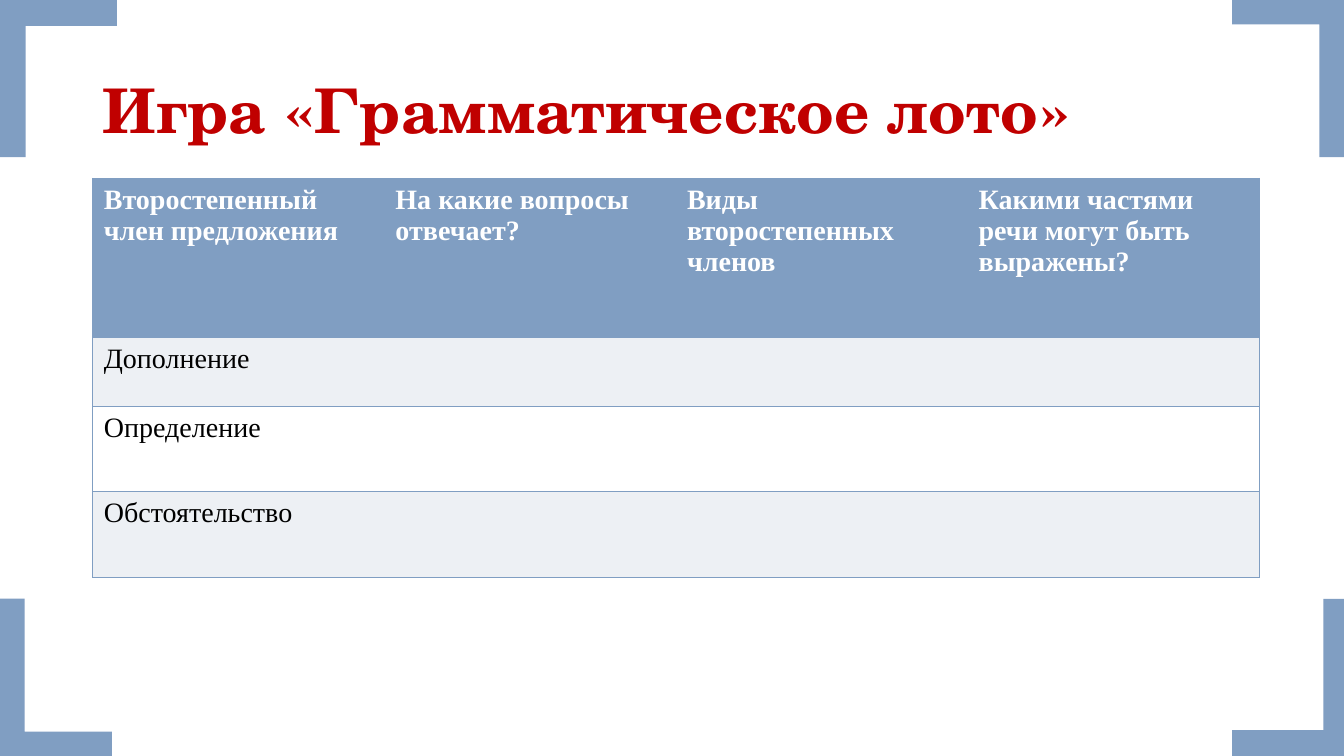
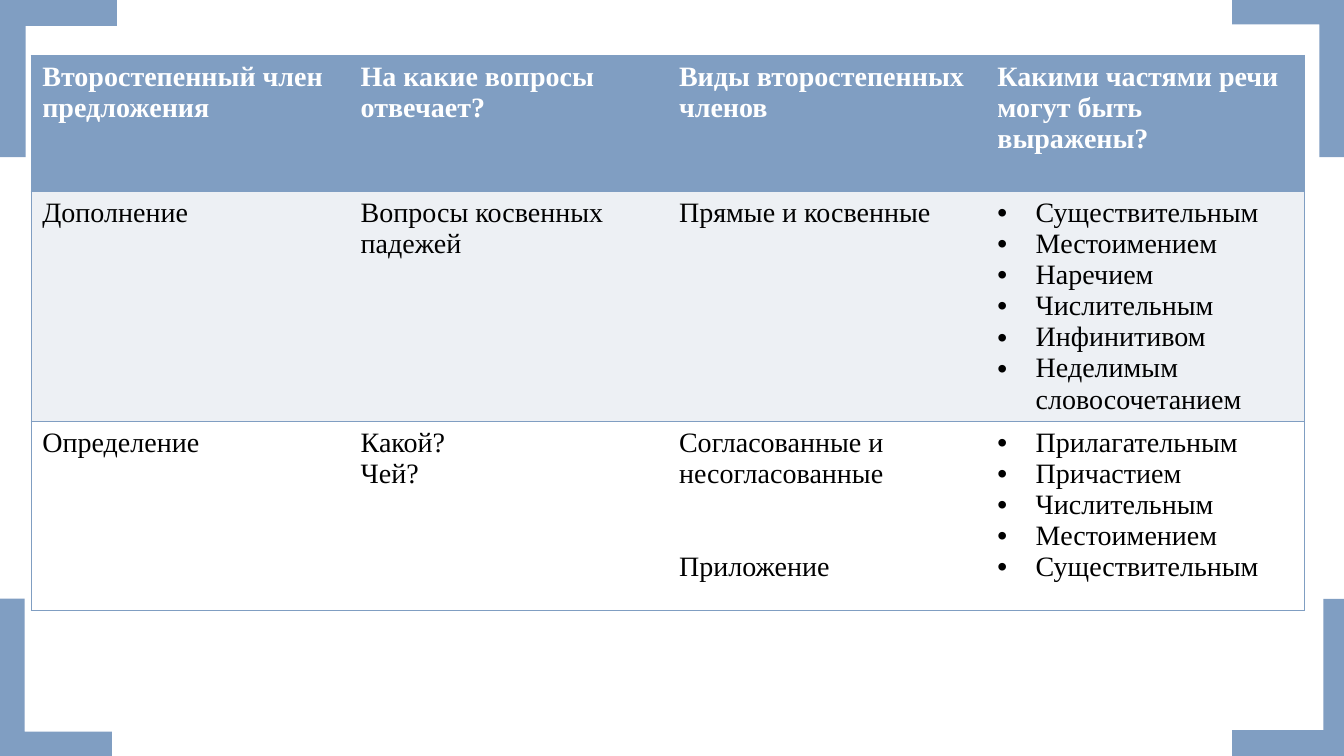
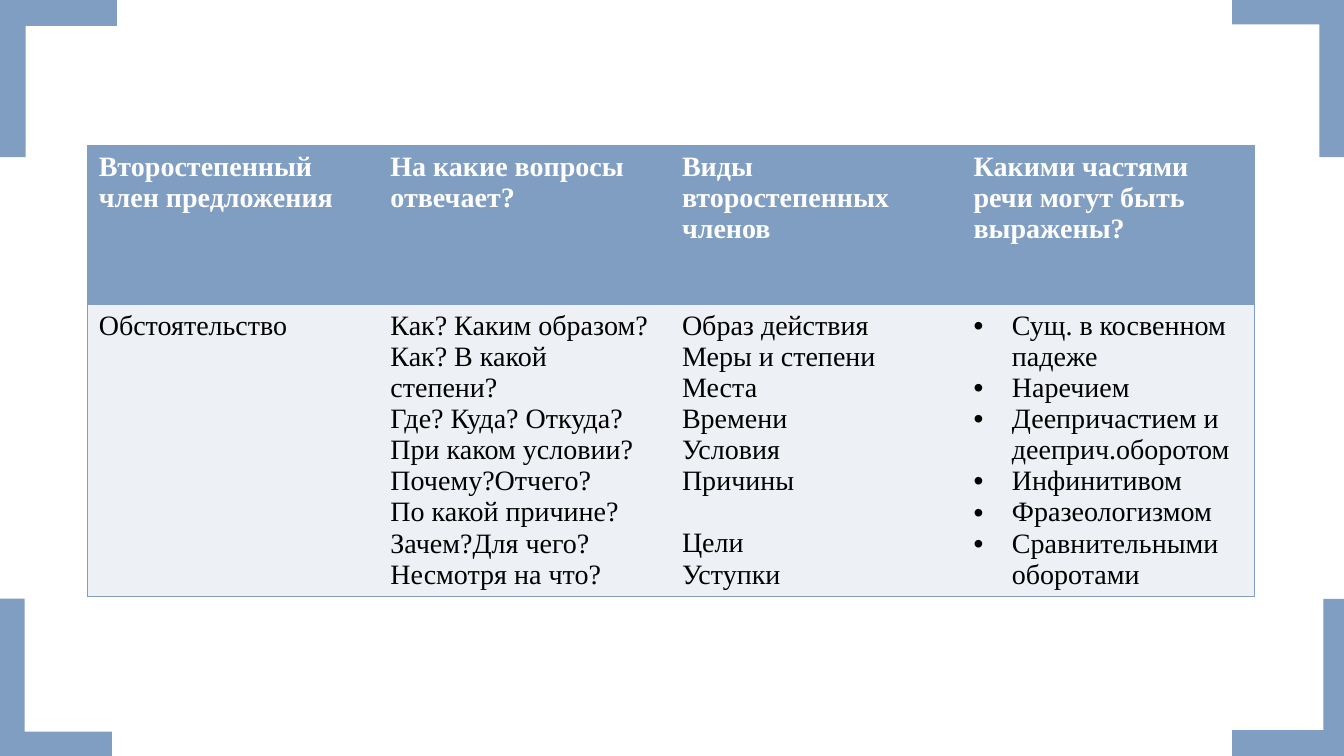
"""Builds three slides of a grammar lotto: an empty grid and its answers."""
from pptx import Presentation
from pptx.dml.color import RGBColor
from pptx.enum.shapes import MSO_SHAPE
from pptx.enum.text import MSO_ANCHOR, PP_ALIGN
from pptx.oxml.ns import qn
from pptx.util import Inches, Pt
from lxml.etree import SubElement

BLUE, PALE, WHITE, BLACK, RED = "809EC2", "EDF0F4", "FFFFFF", "000000", "C00000"
TITLE_FONT = {"name": "TeX Gyre Schola", "size": Pt(44), "bold": True}
HEADER_FONT = {"name": "Times New Roman", "size": Pt(20), "bold": True}
BODY_FONT = {**HEADER_FONT, "bold": False}
MARGINS = {"margin_left": Inches(0.11), "margin_right": Inches(0.11),
           "margin_top": Inches(0.06), "margin_bottom": Inches(0.06)}
NO_STYLE_NO_GRID = "{2D5ABB26-0587-4C30-8999-92F81FD0307C}"
LINE_HEIGHT = 22.15
BULLET_COLUMN = 3

CORNERS = [
    (0, 5.94, 1.11, 1.56, 0),
    (12.22, 0, 1.11, 1.56, 180),
    (12.02, 6.14, 1.56, 1.16, 270),
    (-0.2, 0.2, 1.56, 1.16, 90),
]

HEADER = [["Второстепенный член предложения"], ["На какие вопросы отвечает?"],
          ["Виды второстепенных членов"], ["Какими частями речи могут быть выражены?"]]

SLIDES = [
    {
        "title": "Игра «Грамматическое лото»",
        "at": (0.92, 1.77), "width": 11.57, "heights": [1.58, 0.68, 0.85, 0.85],
        "rows": [
            [["Дополнение"], [], [], []],
            [["Определение"], [], [], []],
            [["Обстоятельство"], [], [], []],
        ],
    },
    {
        "at": (0.31, 0.55), "width": 12.63, "heights": [1.35, 2.26, 1.88],
        "rows": [
            [["Дополнение"], ["Вопросы косвенных падежей"], ["Прямые и косвенные"],
             ["Существительным", "Местоимением", "Наречием", "Числительным",
              "Инфинитивом", "Неделимым словосочетанием"]],
            [["Определение"], ["Какой?", "Чей?"],
             ["Согласованные и несогласованные", "Приложение"],
             ["Прилагательным", "Причастием", "Числительным", "Местоимением",
              "Существительным"]],
        ],
        "lines_before": {"Приложение": 2},
    },
    {
        "at": (0.87, 1.44), "width": 11.57, "heights": [1.58, 2.87],
        "rows": [
            [["Обстоятельство"],
             ["Как? Каким образом?", "Как? В какой степени?", "Где? Куда? Откуда?",
              "При каком условии?", "Почему?Отчего?", "По какой причине?",
              "Зачем?Для чего?", "Несмотря на что?"],
             ["Образ действия", "Меры и степени", "Места", "Времени", "Условия",
              "Причины", "Цели", "Уступки"],
             ["Сущ. в косвенном падеже", "Наречием",
              "Деепричастием и дееприч.оборотом", "Инфинитивом", "Фразеологизмом",
              "Сравнительными оборотами"]],
        ],
        "lines_before": {"Цели": 1},
    },
]


def paint(target, color):
    """Gives a fill a solid colour."""
    target.solid()
    target.fore_color.rgb = RGBColor.from_string(color)


def apply(target, values):
    """Sets attributes from a dict."""
    for name, value in values.items():
        setattr(target, name, value)


def style_font(font, values, color):
    """Formats a font and colours it."""
    apply(font, values)
    font.color.rgb = RGBColor.from_string(color)


def add_corners(deck, page):
    """Draws the corner brackets and moves them to the slide master."""
    tree = deck.slide_master.element.cSld.spTree
    for index, (left, top, width, height, angle) in enumerate(CORNERS):
        corner = page.shapes.add_shape(MSO_SHAPE.CORNER, Inches(left), Inches(top),
                                       Inches(width), Inches(height))
        corner.rotation = angle
        corner.adjustments[0], corner.adjustments[1] = 0.218, 0.221
        paint(corner.fill, BLUE)
        corner.line.fill.background()
        corner.shadow.inherit = False
        tree.insert(2 + index, corner.element)


def set_title(page, text):
    """Places and formats the slide title."""
    title = page.shapes.title
    apply(title, {"left": Inches(0.92), "top": Inches(0.4),
                  "width": Inches(11.5), "height": Inches(1.45)})
    apply(title.text_frame, {"text": text, "word_wrap": True,
                             "vertical_anchor": MSO_ANCHOR.MIDDLE})
    para = title.text_frame.paragraphs[0]
    apply(para, {"alignment": PP_ALIGN.LEFT, "line_spacing": 0.9})
    style_font(para.runs[0].font, TITLE_FONT, RED)


def add_borders(cell, sides):
    """Draws thin blue lines on the given sides of a cell."""
    properties = cell._tc.get_or_add_tcPr()
    for side in sides:
        line = SubElement(properties, qn(f"a:ln{side}"), w=str(Pt(1)))
        fill = SubElement(line, qn("a:solidFill"))
        SubElement(fill, qn("a:srgbClr"), val=BLUE)


def add_bullet(para):
    """Gives a paragraph a hanging bullet."""
    properties = para._p.get_or_add_pPr()
    properties.set("marL", str(Inches(0.38)))
    properties.set("indent", str(-Inches(0.38)))
    SubElement(properties, qn("a:buFont"), typeface="Arial")
    SubElement(properties, qn("a:buChar"), char="•")


def fill_cell(cell, lines, row, column, lines_before):
    """Writes the lines of one cell and formats it."""
    edges = {0: "L", len(HEADER) - 1: "R"}
    add_borders(cell, edges.get(column, "") + "TB")
    paint(cell.fill, BLUE if row == 0 else PALE if row % 2 else WHITE)
    apply(cell, MARGINS)
    frame = cell.text_frame
    for index, text in enumerate(lines):
        para = frame.add_paragraph() if index else frame.paragraphs[0]
        if row and column == BULLET_COLUMN:
            add_bullet(para)
        if text in lines_before:
            para.space_before = Pt(lines_before[text] * LINE_HEIGHT)
        span = para.add_run()
        span.text = text
        style_font(span.font, BODY_FONT if row else HEADER_FONT,
                   BLACK if row else WHITE)


def add_grid(page, content):
    """Adds the table of a slide."""
    rows = [HEADER] + content["rows"]
    left, top = content["at"]
    heights = content["heights"]
    frame = page.shapes.add_table(len(rows), len(HEADER), Inches(left), Inches(top),
                                  Inches(content["width"]), Inches(sum(heights)))
    frame.element.find(".//" + qn("a:tableStyleId")).text = NO_STYLE_NO_GRID
    table = frame.table
    apply(table, {"first_row": False, "horz_banding": False})
    for row, (cells, height) in enumerate(zip(rows, heights)):
        table.rows[row].height = Inches(height)
        for column, lines in enumerate(cells):
            fill_cell(table.cell(row, column), lines, row, column,
                      content.get("lines_before", {}))


def main():
    """Builds and saves the deck."""
    deck = Presentation()
    deck.slide_width, deck.slide_height = Inches(13.33), Inches(7.5)
    title_only, blank = deck.slide_layouts[5], deck.slide_layouts[6]
    for content in SLIDES:
        page = deck.slides.add_slide(title_only if "title" in content else blank)
        if "title" in content:
            set_title(page, content["title"])
        add_grid(page, content)
    add_corners(deck, deck.slides[0])
    deck.save("out.pptx")


if __name__ == "__main__":
    main()
